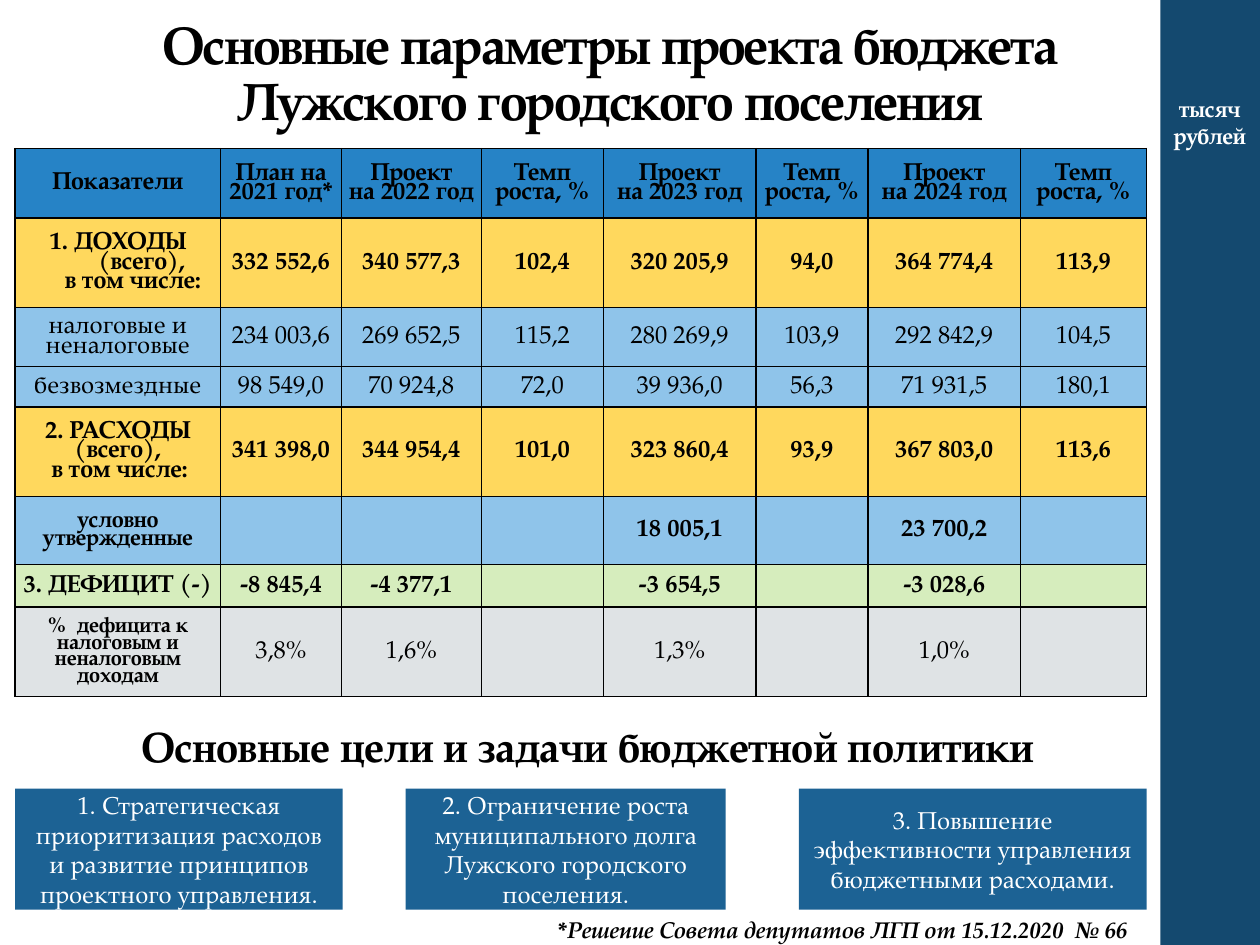
from lxml import etree
from pptx import Presentation
from pptx.dml.color import RGBColor
from pptx.enum.shapes import MSO_SHAPE as Shape
from pptx.enum.text import MSO_ANCHOR as Anchor, PP_ALIGN as Align
from pptx.oxml.ns import qn
from pptx.util import Inches, Pt

BLACK = RGBColor(0x00, 0x00, 0x00)
WHITE = RGBColor(0xFF, 0xFF, 0xFF)
NAVY = RGBColor(0x14, 0x49, 0x6F)
BOX_BLUE = RGBColor(0x1C, 0x62, 0x94)
HEADER_BLUE = RGBColor(0x26, 0x83, 0xC6)
YELLOW = RGBColor(0xFF, 0xD8, 0x5D)
LIGHT_BLUE = RGBColor(0x8F, 0xC4, 0xEA)
GREEN = RGBColor(0xD6, 0xED, 0xBD)
GREY = RGBColor(0xDF, 0xE3, 0xE5)

FONT = "TeX Gyre Pagella"
COLUMNS, ROWS = 100, 75  # slide grid

COLUMN_WIDTHS = [16.3, 9.6, 11.1, 9.7, 12.1, 8.9, 12.1, 10]

# Label paragraphs are (text, left margin, first-line indent) in inches
INCOME = [("1. ДОХОДЫ (всего),", 0.38, -0.38), ("в том числе:", 0.24, 0)]
EXPENSES = [("2. РАСХОДЫ (всего),", 0, 0), ("в том числе:", 0.03, 0)]

# Height, fill, label size, label bold, values bold, label, values
TABLE_ROWS = [
    (5.5, HEADER_BLUE, 14, True, True, "Показатели",
     ["План на 2021 год*", "Проект\nна 2022 год", "Темп роста, %",
      "Проект\nна 2023 год", "Темп роста, %",
      "Проект\nна 2024 год", "Темп роста, %"]),
    (7.1, YELLOW, 14, True, True, INCOME,
     ["332 552,6", "340 577,3", "102,4", "320 205,9", "94,0", "364 774,4", "113,9"]),
    (4.7, LIGHT_BLUE, 14, False, False, "налоговые и неналоговые",
     ["234 003,6", "269 652,5", "115,2", "280 269,9", "103,9", "292 842,9", "104,5"]),
    (3.2, LIGHT_BLUE, 14, False, False, "безвозмездные",
     ["98 549,0", "70 924,8", "72,0", "39 936,0", "56,3", "71 931,5", "180,1"]),
    (7.1, YELLOW, 14, True, True, EXPENSES,
     ["341 398,0", "344 954,4", "101,0", "323 860,4", "93,9", "367 803,0", "113,6"]),
    (5.4, LIGHT_BLUE, 13, True, True, "условно утвержденные",
     ["", "", "", "18 005,1", "", "23 700,2", ""]),
    (3.4, GREEN, 14, True, True, "3. ДЕФИЦИТ (-)",
     ["-8 845,4", "-4 377,1", "", "-3 654,5", "", "-3 028,6", ""]),
    (7.1, GREY, 12, True, False, "%  дефицита к налоговым и неналоговым доходам",
     ["3,8%", "1,6%", "", "1,3%", "", "1,0%", ""]),
]

# Left, width, text
GOALS = [
    (1.2, 26, "1. Стратегическая приоритизация расходов и развитие принципов "
              "проектного управления."),
    (32.2, 25.4, "2. Ограничение роста муниципального долга Лужского городского "
                 "поселения."),
    (63.4, 27.6, "3. Повышение эффективности управления бюджетными расходами."),
]


class BudgetSlide:
    """Holds the style and the current slide; lengths are grid units."""

    def __init__(self, presentation):
        self.column = presentation.slide_width / COLUMNS
        self.row = presentation.slide_height / ROWS
        self.slide = presentation.slides.add_slide(presentation.slide_layouts[5])

    def area(self, left, top, width, height):
        return (round(left * self.column), round(top * self.row),
                round(width * self.column), round(height * self.row))

    def styled_run(self, paragraph, text, size, color=BLACK, bold=False, italic=False,
                   align=Align.CENTER):
        paragraph.alignment = align
        run = paragraph.add_run()
        run.text = text
        font = run.font
        font.name, font.size, font.bold, font.italic = FONT, Pt(size), bold, italic
        font.color.rgb = color
        return run

    def title(self, lines, area, size):
        shape = self.slide.shapes.title
        shape.left, shape.top, shape.width, shape.height = self.area(*area)
        frame = shape.text_frame
        frame.word_wrap = True
        frame.vertical_anchor = Anchor.BOTTOM
        paragraph = frame.paragraphs[0]
        paragraph.line_spacing = 0.9
        for index, line in enumerate(lines):
            if index:
                paragraph.add_line_break()
            run = self.styled_run(paragraph, line, size, bold=True)
            run._r.get_or_add_rPr().set("spc", "-70")

    def text(self, text, area, size, **style):
        frame = self.slide.shapes.add_textbox(*self.area(*area)).text_frame
        frame.word_wrap = True
        self.styled_run(frame.paragraphs[0], text, size, **style)

    def box(self, area, fill, text=""):
        shape = self.slide.shapes.add_shape(Shape.RECTANGLE, *self.area(*area))
        shape.shadow.inherit = False
        shape.fill.solid()
        shape.fill.fore_color.rgb = fill
        shape.line.fill.background()
        if text:
            frame = shape.text_frame
            frame.word_wrap = True
            frame.vertical_anchor = Anchor.MIDDLE
            self.styled_run(frame.paragraphs[0], text, 14, WHITE)

    def cell(self, cell, content, fill, size, bold):
        cell.margin_left = cell.margin_top = cell.margin_right = Inches(0.01)
        cell.margin_bottom = 0
        cell.vertical_anchor = Anchor.MIDDLE
        if isinstance(content, str):
            content = [(line, 0, 0) for line in content.split("\n") if line]
        frame = cell.text_frame
        for index, (text, margin, indent) in enumerate(content):
            paragraph = frame.add_paragraph() if index else frame.paragraphs[0]
            paragraph.line_spacing = 0.8
            self.styled_run(paragraph, text, size, bold=bold)
            properties = paragraph._p.get_or_add_pPr()
            properties.set("marL", str(int(Inches(margin))))
            properties.set("indent", str(int(Inches(indent))))
        # Borders come before the fill in the cell properties
        properties = cell._tc.get_or_add_tcPr()
        for side in ("lnL", "lnR", "lnT", "lnB"):
            line = etree.SubElement(properties, qn("a:" + side), w=str(int(Pt(1))))
            solid = etree.SubElement(line, qn("a:solidFill"))
            etree.SubElement(solid, qn("a:srgbClr"), val=str(BLACK))
        cell.fill.solid()
        cell.fill.fore_color.rgb = fill

    def table(self, left, top, widths, rows):
        area = self.area(left, top, sum(widths), sum(row[0] for row in rows))
        table = self.slide.shapes.add_table(len(rows), len(widths), *area).table
        table.first_row = table.horz_banding = False
        for column, width in zip(table.columns, widths):
            column.width = round(width * self.column)
        for index, (height, fill, size, label_bold, bold, label, values) in enumerate(rows):
            table.rows[index].height = round(height * self.row)
            self.cell(table.cell(index, 0), label, fill, size, label_bold)
            for position, value in enumerate(values, 1):
                self.cell(table.cell(index, position), value, fill, 14, bold)


def main():
    presentation = Presentation()
    presentation.slide_width, presentation.slide_height = Inches(10), Inches(7.5)
    page = BudgetSlide(presentation)

    # Side band and title
    page.box((92.1, 0, 7.9, 75), NAVY)
    page.title(["Основные параметры проекта бюджета", "Лужского городского поселения"],
               (0, 4.6, 96.9, 6.4), 30)

    # Budget table
    page.table(1.2, 11.8, COLUMN_WIDTHS, TABLE_ROWS)

    # Footnote and unit of measure
    page.text("*Решение Совета депутатов ЛГП от 15.12.2020  № 66",
              (43.3, 72.2, 48.8, 3.2), 13, bold=True, italic=True, align=Align.LEFT)
    page.text("тысяч рублей", (90.9, 7, 10.2, 5.4), 13, color=WHITE, bold=True)

    # Goals
    page.text("Основные цели и задачи бюджетной политики",
              (0, 56.7, 93.3, 4.9), 24, bold=True)
    for left, width, goal in GOALS:
        page.box((left, 62.6, width, 9.6), BOX_BLUE, goal)

    presentation.save("out.pptx")


if __name__ == "__main__":
    main()
